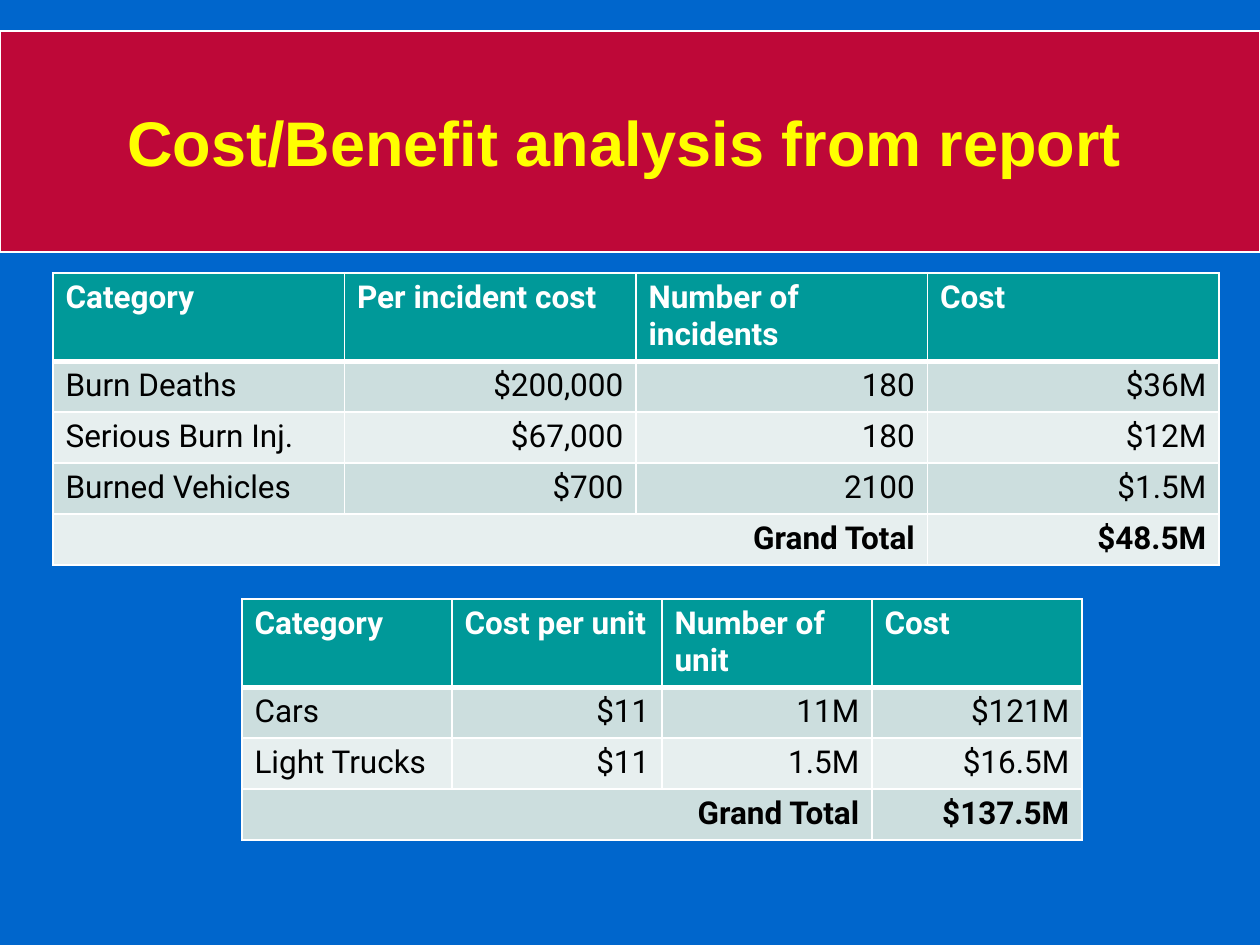
from lxml.etree import SubElement
from pptx import Presentation
from pptx.dml.color import RGBColor
from pptx.enum.shapes import MSO_SHAPE
from pptx.enum.text import MSO_ANCHOR, PP_ALIGN
from pptx.oxml.ns import qn
from pptx.util import Emu, Pt

# Content
TITLE = "Cost/Benefit analysis from report"
TABLES = [
    {"box": (53, 273, 1166, 292), "rows": [
        ("Category", "Per incident cost", "Number of incidents", "Cost"),
        ("Burn Deaths", "$200,000", "180", "$36M"),
        ("Serious Burn Inj.", "$67,000", "180", "$12M"),
        ("Burned Vehicles", "$700", "2100", "$1.5M"),
    ], "total": "$48.5M"},
    {"box": (242, 599, 840, 242), "rows": [
        ("Category", "Cost per unit", "Number of unit", "Cost"),
        ("Cars", "$11", "11M", "$121M"),
        ("Light Trucks", "$11", "1.5M", "$16.5M"),
    ], "total": "$137.5M"},
]
TOTAL_LABEL = "Grand Total"

# Theme and layout, in px
THEME = {
    "bg": "0066CC", "banner": "BE0838", "line": "FFFFFF",
    "header": "009999", "bands": ("CCDEDE", "E7EFEF"),
    "title_font": {"name": "Arial", "size": Pt(36), "bold": True, "color": "FFFF00"},
    "head_font": {"name": "Roboto", "size": Pt(18), "bold": True, "color": "FFFFFF"},
    "body_font": {"name": "Roboto", "size": Pt(18), "bold": False, "color": "000000"},
    "total_font": {"name": "Roboto", "size": Pt(18), "bold": True, "color": "000000"},
}
SLIDE_W, SLIDE_H = 1260, 945
BANNER_BOX = (0, 31, 1260, 221)
TITLE_BOX = (42, 42, 1165, 199)
ROW_H = 51
THIN, THICK = Pt(1), Pt(3)


def px(n):
    return Emu(round(n * 914400 / 126))


def rgb(value):
    return RGBColor.from_string(value)


def fill_with(fill, color):
    fill.solid()
    fill.fore_color.rgb = rgb(color)


def write(tf, text, style, align):
    p = tf.paragraphs[0]
    p.alignment = align
    r = p.add_run()
    r.text = text
    for key, value in style.items():
        if key == "color":
            r.font.color.rgb = rgb(value)
        else:
            setattr(r.font, key, value)


def add_borders(cell, top, bottom):
    tc_pr = cell._tc.get_or_add_tcPr()
    for side, width in {"L": THIN, "R": THIN, "T": top, "B": bottom}.items():
        ln = SubElement(tc_pr, qn(f"a:ln{side}"), w=str(width))
        SubElement(SubElement(ln, qn("a:solidFill")), qn("a:srgbClr"), val=THEME["line"])


def add_cost_table(s, box, rows, total):
    rows = rows + [(TOTAL_LABEL, "", "", total)]
    last, n_cols = len(rows) - 1, len(rows[0])
    frame = s.shapes.add_table(len(rows), n_cols, *map(px, box))
    table = frame.table
    for col in table.columns:
        col.width = px(box[2] / n_cols)
    for row in table.rows:
        row.height = px(ROW_H)
    frame.height = px(box[3])
    table.cell(last, 0).merge(table.cell(last, n_cols - 2))

    for i, row in enumerate(rows):
        color = THEME["bands"][(i - 1) % 2] if i else THEME["header"]
        style = THEME["head_font" if i == 0 else "total_font" if i == last else "body_font"]
        for j, text in enumerate(row):
            cell = table.cell(i, j)
            # The heavy rule is shared by the header and the row under it
            add_borders(cell, THICK if i == 1 else THIN, THICK if i == 0 else THIN)
            fill_with(cell.fill, color)
            if text:
                left = i == 0 or (j == 0 and i < last)
                write(cell.text_frame, text, style, PP_ALIGN.LEFT if left else PP_ALIGN.RIGHT)


def main():
    prs = Presentation()
    prs.slide_width, prs.slide_height = px(SLIDE_W), px(SLIDE_H)
    s = prs.slides.add_slide(prs.slide_layouts[6])
    fill_with(s.background.fill, THEME["bg"])

    # Title banner
    sp = s.shapes.add_shape(MSO_SHAPE.RECTANGLE, *map(px, BANNER_BOX))
    sp.shadow.inherit = False
    fill_with(sp.fill, THEME["banner"])
    sp.line.color.rgb = rgb(THEME["line"])
    sp.line.width = THIN
    tf = s.shapes.add_textbox(*map(px, TITLE_BOX)).text_frame
    tf.word_wrap = True
    tf.vertical_anchor = MSO_ANCHOR.MIDDLE
    write(tf, TITLE, THEME["title_font"], PP_ALIGN.CENTER)

    # Cost and benefit tables
    for spec_table in TABLES:
        add_cost_table(s, **spec_table)

    prs.save("out.pptx")


if __name__ == "__main__":
    main()
